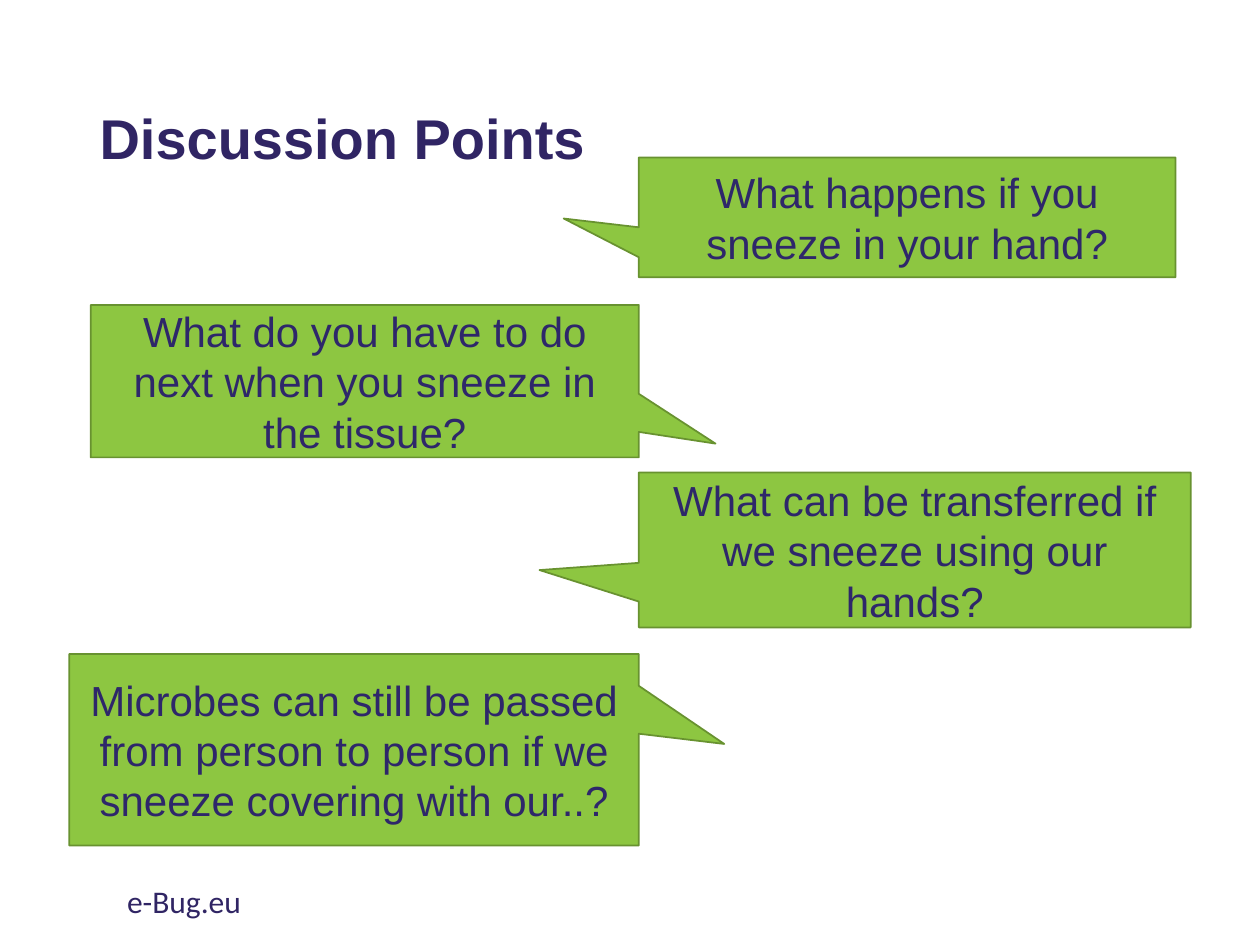
from dataclasses import dataclass
from pptx import Presentation
from pptx.dml.color import RGBColor as RGB
from pptx.enum.shapes import MSO_SHAPE as Shape
from pptx.enum.text import MSO_ANCHOR as Anchor, MSO_AUTO_SIZE as Fit, PP_ALIGN as Align
from pptx.util import Inches, Pt


@dataclass(frozen=True)
class Theme:
    title: RGB = RGB.from_string("302564")
    ink: RGB = RGB.from_string("2E276A")
    fill: RGB = RGB.from_string("8DC641")
    edge: RGB = RGB.from_string("689230")
    head: str = "Arial"
    foot: str = "Calibri"
    big: int = 32
    mid: int = 24
    small: int = 18


THEME = Theme()
MID = 5.07  # the line where left and right callouts meet

# Side, top, width, height, pointer tip (x, y from centre), question
POINTS = [
    ("right", 1.25, 4.26, 0.95, (-0.64, 0.01),
     "What happens if you sneeze in your hand?"),
    ("left", 2.42, 4.35, 1.21, (0.64, 0.41),
     "What do you have to do next when you sneeze in the tissue?"),
    ("right", 3.75, 4.38, 1.23, (-0.68, 0.13),
     "What can be transferred if we sneeze using our hands?"),
    ("left", 5.19, 4.52, 1.52, (0.65, -0.03),
     "Microbes can still be passed from person to person if we "
     "sneeze covering with our..?"),
]


def place(shape, box):
    shape.left, shape.top, shape.width, shape.height = map(Inches, box)


def write(para, text, font, size, color, bold=False):
    run = para.add_run()
    run.text = text
    run.font.name = font
    run.font.size = Pt(size)
    run.font.color.rgb = color
    run.font.bold = bold


def add_title(slide, box, text):
    title = slide.shapes.title
    place(title, box)
    frame = title.text_frame
    frame.auto_size = Fit.NONE
    frame.vertical_anchor = Anchor.MIDDLE
    para = frame.paragraphs[0]
    para.alignment = Align.LEFT
    para.line_spacing = 0.9
    write(para, text, THEME.head, THEME.big, THEME.title, True)


def add_callout(slide, box, tip, text):
    shape = slide.shapes.add_shape(Shape.RECTANGULAR_CALLOUT, *map(Inches, box))
    shape.shadow.inherit = False
    shape.adjustments[0], shape.adjustments[1] = tip
    shape.fill.solid()
    shape.fill.fore_color.rgb = THEME.fill
    shape.line.color.rgb = THEME.edge
    shape.line.width = Pt(1)
    frame = shape.text_frame
    frame.word_wrap = True
    frame.vertical_anchor = Anchor.MIDDLE
    para = frame.paragraphs[0]
    para.alignment = Align.CENTER
    write(para, text, THEME.head, THEME.mid, THEME.ink)


def add_footer(slide, box, text):
    frame = slide.shapes.add_textbox(*map(Inches, box)).text_frame
    frame.word_wrap = True
    write(frame.paragraphs[0], text, THEME.foot, THEME.small, THEME.title)


def main():
    deck = Presentation()
    deck.slide_width, deck.slide_height = Inches(10), Inches(7.5)
    slide = deck.slides.add_slide(deck.slide_layouts[5])

    # Heading and footer
    add_title(slide, (0.69, 0.4, 8.62, 1.45), "Discussion Points")
    add_footer(slide, (0.91, 6.95, 3.38, 0.4), "e-Bug.eu")

    # Questions on alternating sides of the middle line
    for side, top, width, height, tip, text in POINTS:
        left = MID if side == "right" else MID - width
        add_callout(slide, (left, top, width, height), tip, text)

    deck.save("out.pptx")


if __name__ == "__main__":
    main()
